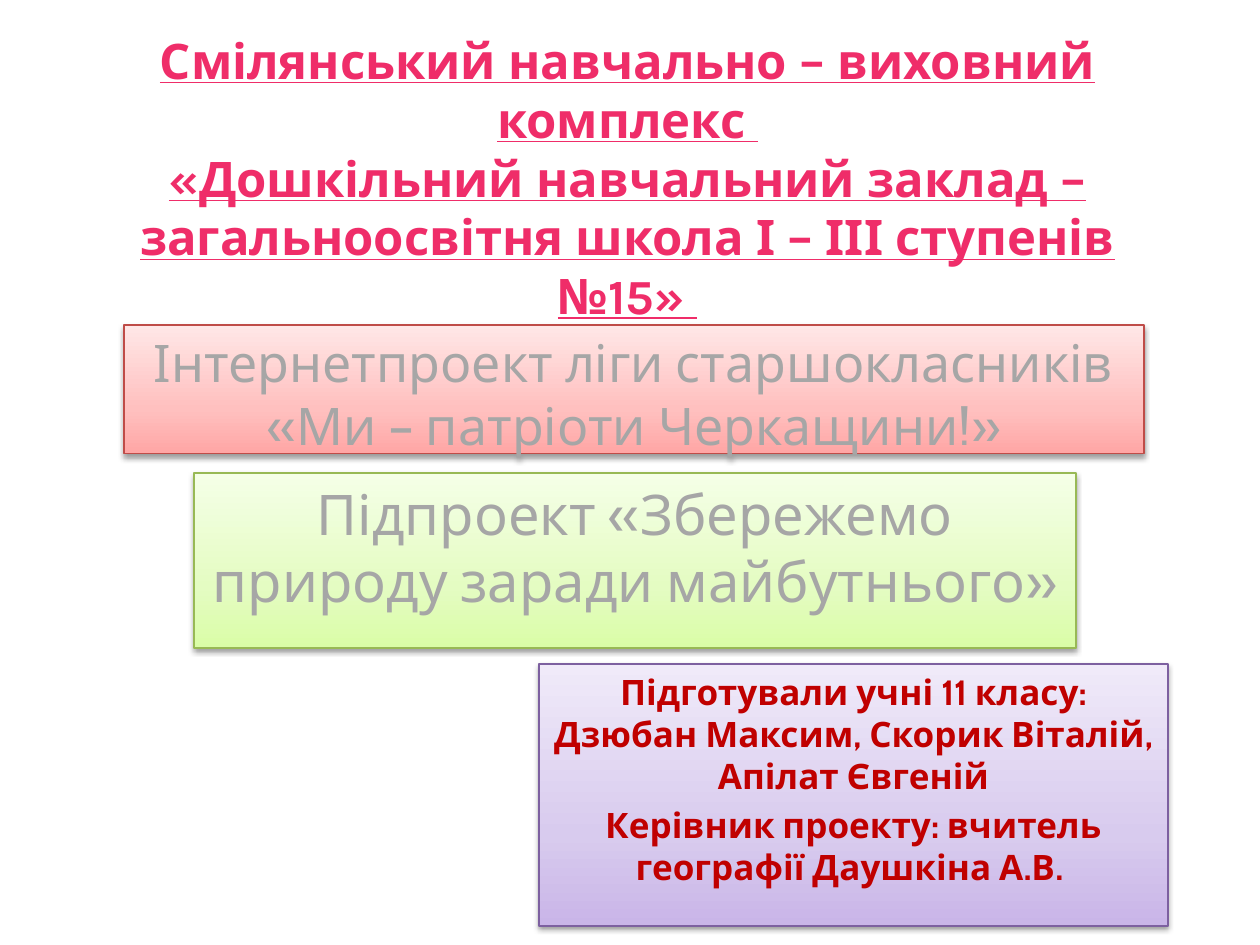
from copy import deepcopy

from lxml.etree import SubElement
from pptx import Presentation
from pptx.dml.color import RGBColor
from pptx.enum.shapes import MSO_SHAPE
from pptx.enum.text import MSO_ANCHOR, MSO_AUTO_SIZE, PP_ALIGN
from pptx.oxml.ns import qn
from pptx.util import Pt

PX = 914400 // 126
PINK = RGBColor(0xEF, 0x2D, 0x69)
GRAY = RGBColor(0xA6, 0xA6, 0xA6)
DARK_RED = RGBColor(0xC0, 0x00, 0x00)
RED_LINE = RGBColor(0xBF, 0x4C, 0x48)
GREEN_LINE = RGBColor(0x98, 0xB9, 0x55)
PURPLE_LINE = RGBColor(0x7D, 0x60, 0xA0)
BLACK = RGBColor(0, 0, 0)
RED_FADE = [RGBColor(0xFF, 0xA6, 0xA5), RGBColor(0xFF, 0xC0, 0xBF), RGBColor(0xFF, 0xE7, 0xE7)]
GREEN_FADE = [RGBColor(0xDA, 0xFD, 0xA7), RGBColor(0xE4, 0xFC, 0xC2), RGBColor(0xF5, 0xFF, 0xE7)]
PURPLE_FADE = [RGBColor(0xC9, 0xB5, 0xE8), RGBColor(0xD8, 0xCB, 0xEE), RGBColor(0xF0, 0xEA, 0xF9)]
FADE_STOPS = [0, 35, 100]

TITLE_BOX = (92, 76, 1071, 203)
TITLE = ("Смілянський навчально – виховний комплекс \v"
         "«Дошкільний навчальний заклад – загальноосвітня школа І – ІІІ ступенів №15» ")
PANELS = [
    dict(box=(124, 325, 1020, 129), fade=RED_FADE, line=RED_LINE,
         paragraphs=["Інтернетпроект ліги старшокласників «Ми – патріоти Черкащини!»"],
         format=dict(size=29.6, color=GRAY)),
    dict(box=(194, 473, 882, 175), fade=GREEN_FADE, line=GREEN_LINE,
         paragraphs=["Підпроект «Збережемо природу заради майбутнього»"],
         format=dict(size=32, color=GRAY)),
    dict(box=(539, 664, 629, 262), fade=PURPLE_FADE, line=PURPLE_LINE,
         paragraphs=["Підготували учні 11 класу: Дзюбан Максим, Скорик Віталій, Апілат Євгеній",
                     "Керівник проекту: вчитель географії Даушкіна А.В. "],
         format=dict(size=20, color=DARK_RED, bold=True)),
]


def write(shape, paragraphs, size, color, font="Cabin", bold=False,
          underline=False, anchor=MSO_ANCHOR.TOP):
    frame = shape.text_frame
    frame.word_wrap = True
    frame.auto_size = MSO_AUTO_SIZE.NONE
    frame.vertical_anchor = anchor
    for index, text in enumerate(paragraphs):
        paragraph = frame.add_paragraph() if index else frame.paragraphs[0]
        paragraph.text = text
        paragraph.alignment = PP_ALIGN.CENTER
        paragraph.space_before = Pt(size * 0.2 if index else 0)
        for run in paragraph.runs:
            run.font.name = font
            run.font.size = Pt(size)
            run.font.bold = bold
            run.font.underline = underline
            run.font.color.rgb = color
        for line_break in paragraph._p.findall(qn("a:br")):
            line_break.append(deepcopy(paragraph.runs[0]._r.rPr))


def add_color(parent, color):
    return SubElement(parent, qn("a:srgbClr"), val=str(color))


def add_fade(shape, colors):
    fade = shape._element.spPr.find(qn("a:gradFill"))
    fade.clear()
    stops = SubElement(fade, qn("a:gsLst"))
    for position, color in zip(FADE_STOPS, colors):
        add_color(SubElement(stops, qn("a:gs"), pos=str(position * 1000)), color)
    SubElement(fade, qn("a:lin"), ang=str(270 * 60000), scaled="0")


def add_shadow(shape):
    shape.shadow.inherit = False
    effects = shape._element.spPr.find(qn("a:effectLst"))
    shadow = SubElement(effects, qn("a:outerShdw"), blurRad=str(Pt(3.1)),
                        dist=str(Pt(1.6)), dir=str(90 * 60000), rotWithShape="0")
    SubElement(add_color(shadow, BLACK), qn("a:alpha"), val="38000")


def add_panel(slide, box, fade, line, paragraphs, format):
    shape = slide.shapes.add_shape(MSO_SHAPE.RECTANGLE, *(value * PX for value in box))
    shape.fill.gradient()
    add_fade(shape, fade)
    shape.line.color.rgb = line
    shape.line.width = Pt(0.75)
    add_shadow(shape)
    write(shape, paragraphs, **format)


def main():
    presentation = Presentation()
    presentation.slide_width = 1260 * PX
    presentation.slide_height = 945 * PX
    slide = presentation.slides.add_slide(presentation.slide_layouts[5])
    title = slide.shapes.title
    title.left, title.top, title.width, title.height = (value * PX for value in TITLE_BOX)
    write(title, [TITLE], size=28, color=PINK, font="Karla", bold=True,
          underline=True, anchor=MSO_ANCHOR.MIDDLE)
    for panel in PANELS:
        add_panel(slide, **panel)
    presentation.save("out.pptx")


if __name__ == "__main__":
    main()
